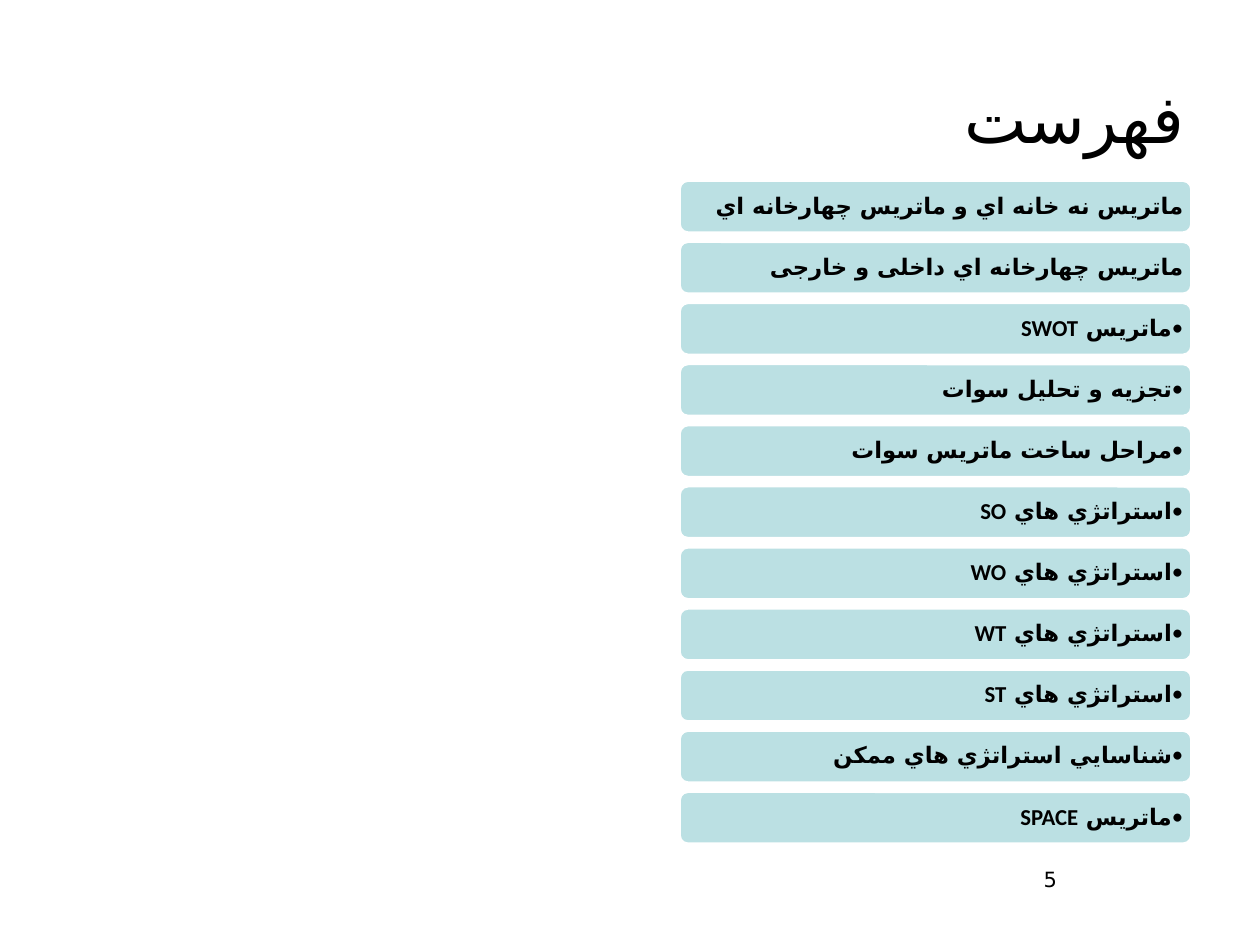
import pptx
import pptx.dml.color
import pptx.enum.shapes
import pptx.enum.text
import pptx.oxml.ns
import pptx.util
from lxml import etree

WIDTH, HEIGHT = 10, 7.5
COLORS = {"text": "000000", "bar": "BBE0E3", "edge": "FFFFFF"}
ALIGN = pptx.enum.text.PP_ALIGN
ANCHOR = pptx.enum.text.MSO_ANCHOR
PERSIAN_FONT = "DejaVu Sans"

BAR_LEFT, BAR_TOP = 5.39, 1.43
BAR_WIDTH, BAR_HEIGHT = 4.07, 0.42
ROW_PITCH = 0.485

PLAIN_ITEMS = [
    "ماتريس نه خانه اي و ماتريس چهارخانه اي",
    "ماتريس چهارخانه اي داخلی و خارجی",
]
BULLET_ITEMS = [
    "ماتریس SWOT",
    "تجزيه و تحليل سوات",
    "مراحل ساخت ماتریس سوات",
    "استراتژي هاي SO",
    "استراتژي هاي WO",
    "استراتژي هاي WT",
    "استراتژي هاي ST",
    "شناسايي استراتژي هاي ممكن",
    "ماتریس SPACE",
]


def rgb(name):
    return pptx.dml.color.RGBColor.from_string(COLORS[name])


def inches(*lengths):
    return [pptx.util.Inches(n) for n in lengths]


def put_text(sp, text, size, font="Calibri", bold=False, align=ALIGN.RIGHT,
             anchor=ANCHOR.MIDDLE, bullet=False, inset=None,
             line_spacing=None, space_after=None):
    tf = sp.text_frame
    tf.word_wrap = True
    tf.vertical_anchor = anchor
    if inset is not None:
        tf.margin_left = tf.margin_right = pptx.util.Inches(inset)
        tf.margin_top = tf.margin_bottom = pptx.util.Inches(inset)
    p = tf.paragraphs[0]
    p.alignment = align
    p.line_spacing = line_spacing
    if space_after is not None:
        p.space_after = pptx.util.Pt(space_after)
    ppr = p._p.get_or_add_pPr()
    ppr.set("rtl", "1")
    if bullet:
        ppr.set("marL", "0")
        ppr.set("indent", "0")
        etree.SubElement(ppr, pptx.oxml.ns.qn("a:buFont"), typeface="Calibri")
        etree.SubElement(ppr, pptx.oxml.ns.qn("a:buChar"), char="•")
    r = p.add_run()
    r.text = text
    r.font.size = pptx.util.Pt(size)
    r.font.name = font
    r.font.bold = bold
    r.font.color.rgb = rgb("text")
    rpr = r._r.get_or_add_rPr()
    rpr.set("lang", "fa-IR")
    etree.SubElement(rpr, pptx.oxml.ns.qn("a:cs"), typeface=PERSIAN_FONT)


def add_title(s, text):
    sp = s.shapes.title
    sp.left, sp.top, sp.width, sp.height = inches(
        WIDTH * 0.05, HEIGHT * 0.04, WIDTH * 0.9, 1.25)
    put_text(sp, text, 38, font="Arial")


def add_bar(s, row, text, bullet):
    sp = s.shapes.add_shape(
        pptx.enum.shapes.MSO_SHAPE.ROUNDED_RECTANGLE,
        *inches(BAR_LEFT, BAR_TOP + row * ROW_PITCH, BAR_WIDTH, BAR_HEIGHT))
    sp.shadow.inherit = False
    sp.fill.solid()
    sp.fill.fore_color.rgb = rgb("bar")
    sp.line.color.rgb = rgb("edge")
    sp.line.width = pptx.util.Pt(2)
    put_text(sp, text, 13, bold=True, bullet=bullet, inset=0.05,
             line_spacing=0.9, space_after=4.5)


def add_page_number(s, text):
    sp = s.shapes.add_textbox(*inches(7.17, 6.83, 2.33, 0.52))
    put_text(sp, text, 12, align=ALIGN.CENTER, anchor=ANCHOR.TOP)


def main():
    prs = pptx.Presentation()
    prs.slide_width, prs.slide_height = inches(WIDTH, HEIGHT)
    s = prs.slides.add_slide(prs.slide_layouts[5])
    add_title(s, "فهرست")
    add_page_number(s, "5")
    for row, text in enumerate(PLAIN_ITEMS + BULLET_ITEMS):
        add_bar(s, row, text, bullet=row >= len(PLAIN_ITEMS))
    prs.save("out.pptx")


if __name__ == "__main__":
    main()
